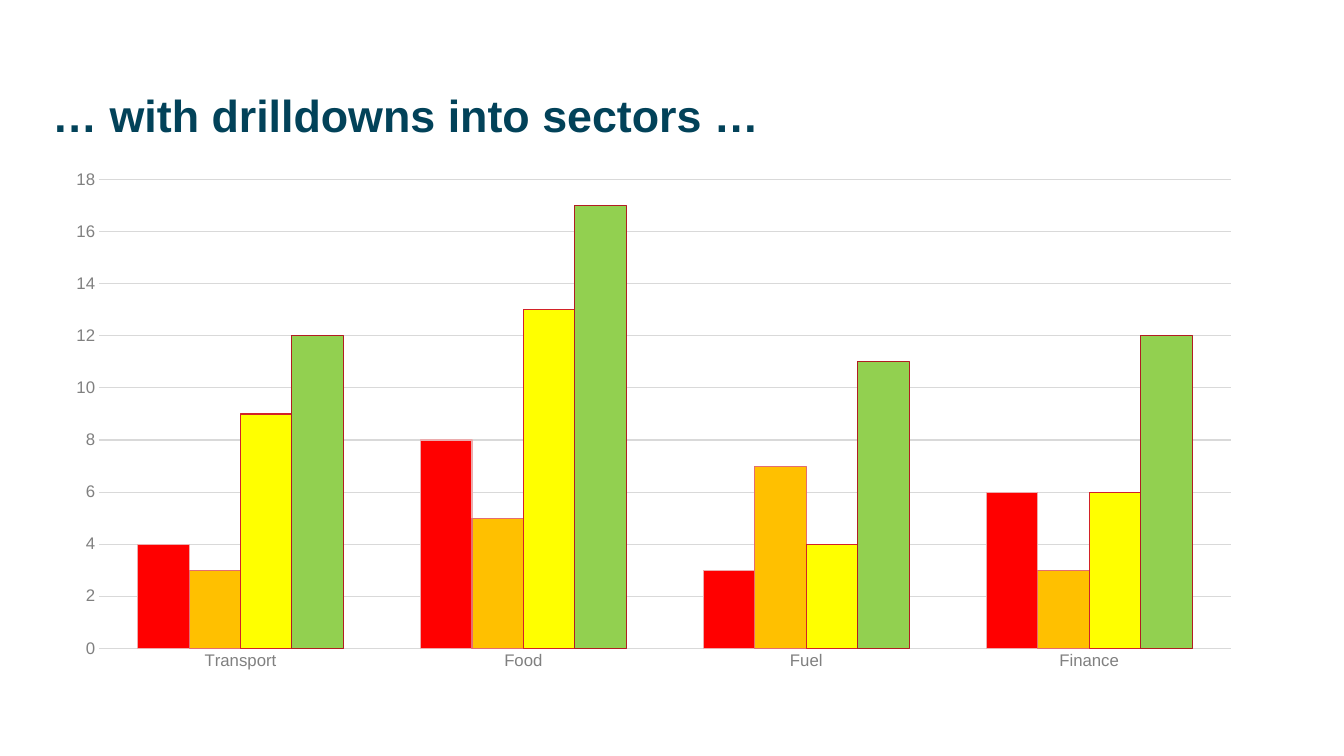
"""Build a slide with a clustered column chart of four sectors."""
from pptx import Presentation
from pptx.chart.data import CategoryChartData
from pptx.dml.color import RGBColor
from pptx.enum.chart import XL_CHART_TYPE, XL_TICK_MARK
from pptx.enum.text import MSO_ANCHOR, MSO_AUTO_SIZE, PP_ALIGN
from pptx.util import Cm, Pt


def tint(color, code):
    color.rgb = RGBColor.from_string(code)


def style(item, values):
    for key, value in values.items():
        setattr(item, key, value)


deck = Presentation()
style(deck, {"slide_width": Cm(33.87), "slide_height": Cm(19.05)})
slide = deck.slides.add_slide(deck.slide_layouts[5])

title = slide.shapes.title
style(title, {"left": Cm(1.32), "top": Cm(2.13), "width": Cm(30.3), "height": Cm(1.68)})
frame = title.text_frame
frame.text = "… with drilldowns into sectors …"
style(frame, {"margin_left": 0, "margin_top": 0, "margin_right": 0, "margin_bottom": 0,
              "vertical_anchor": MSO_ANCHOR.MIDDLE, "word_wrap": True,
              "auto_size": MSO_AUTO_SIZE.NONE})
line = frame.paragraphs[0]
style(line, {"alignment": PP_ALIGN.LEFT, "line_spacing": 0.9})
font = line.runs[0].font
style(font, {"name": "Arial", "size": Pt(32), "bold": True})
tint(font.color, "024259")

bars = [
    ((4, 8, 3, 6), "FF0000", "EBACAD"),
    ((3, 5, 7, 3), "FFC000", "E46D6F"),
    ((9, 13, 4, 6), "FFFF00", "D22228"),
    ((12, 17, 11, 12), "92D050", "B11D22"),
]
data = CategoryChartData()
data.categories = ["Transport", "Food", "Fuel", "Finance"]
for num, (vals, fill, edge) in enumerate(bars, 1):
    data.add_series(f"Series {num}", vals)

chart = slide.shapes.add_chart(XL_CHART_TYPE.COLUMN_CLUSTERED, Cm(1.32), Cm(4.04),
                               Cm(30.3), Cm(13.11), data).chart
style(chart, {"has_legend": False, "has_title": False})
style(chart.font, {"name": "Arial", "size": Pt(10)})
tint(chart.font.color, "000000")

plot = chart.plots[0]
style(plot, {"gap_width": 150, "overlap": 0, "vary_by_categories": False})
for series, (vals, fill, edge) in zip(plot.series, bars):
    look = series.format
    look.fill.solid()
    tint(look.fill.fore_color, fill)
    tint(look.line.color, edge)
    look.line.width = Pt(0.75)

for axis in (chart.category_axis, chart.value_axis):
    style(axis, {"major_tick_mark": XL_TICK_MARK.NONE, "minor_tick_mark": XL_TICK_MARK.NONE})
    axis.format.line.fill.background()
    font = axis.tick_labels.font
    style(font, {"name": "Arial", "size": Pt(12)})
    tint(font.color, "808080")

style(chart.value_axis, {"minimum_scale": 0, "maximum_scale": 18, "major_unit": 2,
                         "has_major_gridlines": True})
grid = chart.value_axis.major_gridlines.format.line
grid.width = Pt(0.75)
tint(grid.color, "D9D9D9")

deck.save("out.pptx")
